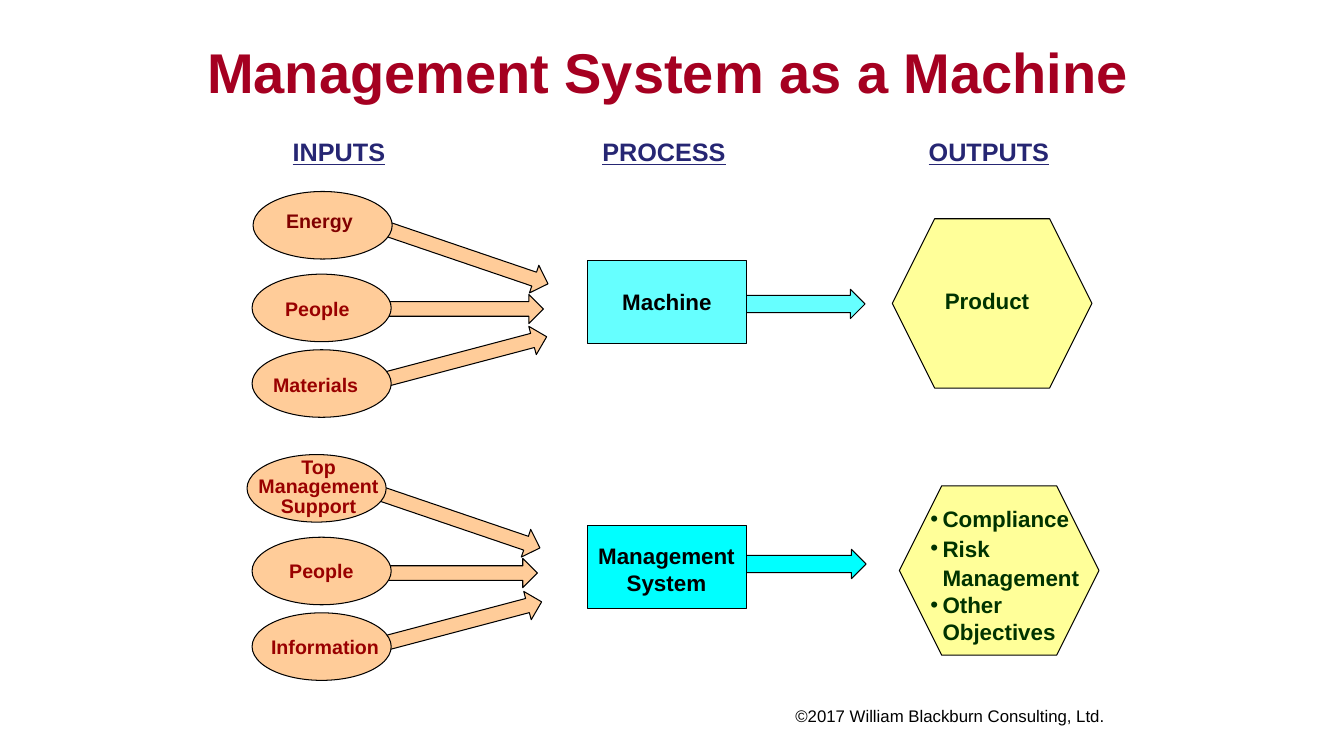
from lxml import etree
from pptx import Presentation
from pptx.dml.color import RGBColor
from pptx.enum.shapes import MSO_SHAPE
from pptx.enum.text import MSO_ANCHOR, PP_ALIGN
from pptx.oxml.ns import qn
from pptx.util import Emu, Pt

ARROW, OVAL = MSO_SHAPE.RIGHT_ARROW, MSO_SHAPE.OVAL
RECT, HEXAGON = MSO_SHAPE.RECTANGLE, MSO_SHAPE.HEXAGON
LEFT, CENTER = PP_ALIGN.LEFT, PP_ALIGN.CENTER
TOP, MIDDLE = MSO_ANCHOR.TOP, MSO_ANCHOR.MIDDLE

PEACH, AQUA, CYAN, YELLOW = "FFCC99", "66FFFF", "00FFFF", "FFFF99"
WHITE, BLACK, CRIMSON, NAVY = "FFFFFF", "000000", "A50021", "262673"
MAROON, RED, GREEN = "800000", "990000", "003300"


def px(n):
    return Emu(n * 9144)


def rgb(value):
    return RGBColor.from_string(value)


class Deck:
    font = "Arial"
    line_width = Pt(0.75)

    def __init__(self, prs):
        self.s = prs.slides.add_slide(prs.slide_layouts[5])

    def fill_text(self, tf, lines, size, color, align=CENTER, anchor=TOP, bold=True,
                  underline=None, spacing=None, bullet=None):
        tf.word_wrap = True
        tf.vertical_anchor = anchor
        for i, line in enumerate(lines):
            p = tf.add_paragraph() if i else tf.paragraphs[0]
            p.alignment = align
            if bullet:
                self.bullet(p, bullet)
            if spacing and spacing[i]:
                p.line_spacing = Pt(spacing[i])
            r = p.add_run()
            r.text = line
            r.font.name, r.font.size = self.font, Pt(size)
            r.font.bold, r.font.underline = bold, underline
            r.font.color.rgb = rgb(color)

    def bullet(self, p, char):
        pPr = p._p.get_or_add_pPr()
        pPr.set("marL", str(px(12)))
        pPr.set("indent", str(px(-12)))
        etree.SubElement(pPr, qn("a:buFont"), typeface=self.font)
        etree.SubElement(pPr, qn("a:buChar"), char=char)

    def title(self, box, text):
        sp = self.s.shapes.title
        sp.left, sp.top, sp.width, sp.height = map(px, box)
        self.fill_text(sp.text_frame, [text], 40, CRIMSON, anchor=MIDDLE)

    def shape(self, kind, box, fill, rotation=0, shaft=None):
        sp = self.s.shapes.add_shape(kind, *map(px, box))
        sp.shadow.inherit = False
        sp.fill.solid()
        sp.fill.fore_color.rgb = rgb(fill)
        sp.line.color.rgb = rgb(BLACK)
        sp.line.width = self.line_width
        sp.rotation = rotation
        if shaft:
            sp.adjustments[0] = shaft
        return sp

    def text(self, box, lines, size, color, **style):
        sp = self.s.shapes.add_textbox(*map(px, box))
        self.fill_text(sp.text_frame, lines, size, color, **style)

    def border(self, cell, side, width):
        tcPr = cell._tc.get_or_add_tcPr()
        ln = etree.SubElement(tcPr, qn(f"a:ln{side}"), w=str(Pt(width)))
        solid = etree.SubElement(ln, qn("a:solidFill"))
        etree.SubElement(solid, qn("a:srgbClr"), val=WHITE)

    def headings(self, box, names):
        table = self.s.shapes.add_table(2, len(names), *map(px, box)).table
        for row in range(2):
            for col, name in enumerate(names):
                cell = table.cell(row, col)
                for side in "LRTB":
                    middle = (row, side) in ((0, "B"), (1, "T"))
                    self.border(cell, side, 3 if middle else 1)
                if row:
                    cell.fill.solid()
                    cell.fill.fore_color.rgb = rgb(WHITE)
                else:
                    cell.fill.background()
                    self.fill_text(cell.text_frame, [name], 18, NAVY, underline=True)

    def source(self, oval, arrow, rotation, label, box, color=RED, **style):
        self.shape(ARROW, (*arrow, 168, 29), PEACH, rotation)
        self.shape(OVAL, (*oval, 138, 67), PEACH)
        self.text(box, [label], 14, color, **style)


def main():
    prs = Presentation()
    prs.slide_width, prs.slide_height = px(1333), px(750)
    d = Deck(prs)
    d.title((183, 8, 958, 125), "Management System as a Machine")
    d.headings((175, 133, 967, 81), ["INPUTS", "PROCESS", "OUTPUTS"])

    up, down = -14.8, 18.8
    d.source((250, 608), (372, 604), up, "Information", (259, 625, 130, 34), align=LEFT)
    d.source((250, 533), (365, 554), 0, "People", (277, 550, 100, 34), align=LEFT)
    d.source((245, 451), (372, 502), down, "Top Management Support",
             (246, 450, 140, 69), spacing=[14])
    d.source((250, 347), (377, 341), up, "Materials", (261, 365, 113, 34), align=LEFT)
    d.source((250, 272), (371, 292), 0, "People", (273, 290, 100, 34), align=LEFT)
    d.source((251, 190), (380, 240), down, "Energy", (274, 202, 100, 34), MAROON, align=LEFT)

    d.shape(ARROW, (717, 287, 141, 29), AQUA, shaft=0.59)
    machine = d.shape(RECT, (583, 258, 157, 83), AQUA)
    d.fill_text(machine.text_frame, ["Machine"], 16, BLACK, anchor=MIDDLE)
    d.shape(HEXAGON, (885, 217, 198, 168), YELLOW)
    d.text((908, 280, 142, 37), ["Product"], 16, GREEN)

    d.shape(ARROW, (717, 545, 142, 29), CYAN, shaft=0.59)
    d.shape(RECT, (583, 521, 157, 83), CYAN)
    d.text((580, 533, 162, 64), ["Management System"], 16, BLACK)
    d.shape(HEXAGON, (892, 482, 198, 168), YELLOW)
    d.text((913, 494, 175, 152), ["Compliance", "Risk Management", "Other Objectives"],
           16, GREEN, align=LEFT, spacing=[21, 21, None], bullet="•")

    d.text((779, 695, 341, 30), ["©2017 William Blackburn Consulting, Ltd."],
           12, BLACK, align=LEFT, bold=False)
    prs.save("out.pptx")


if __name__ == "__main__":
    main()
